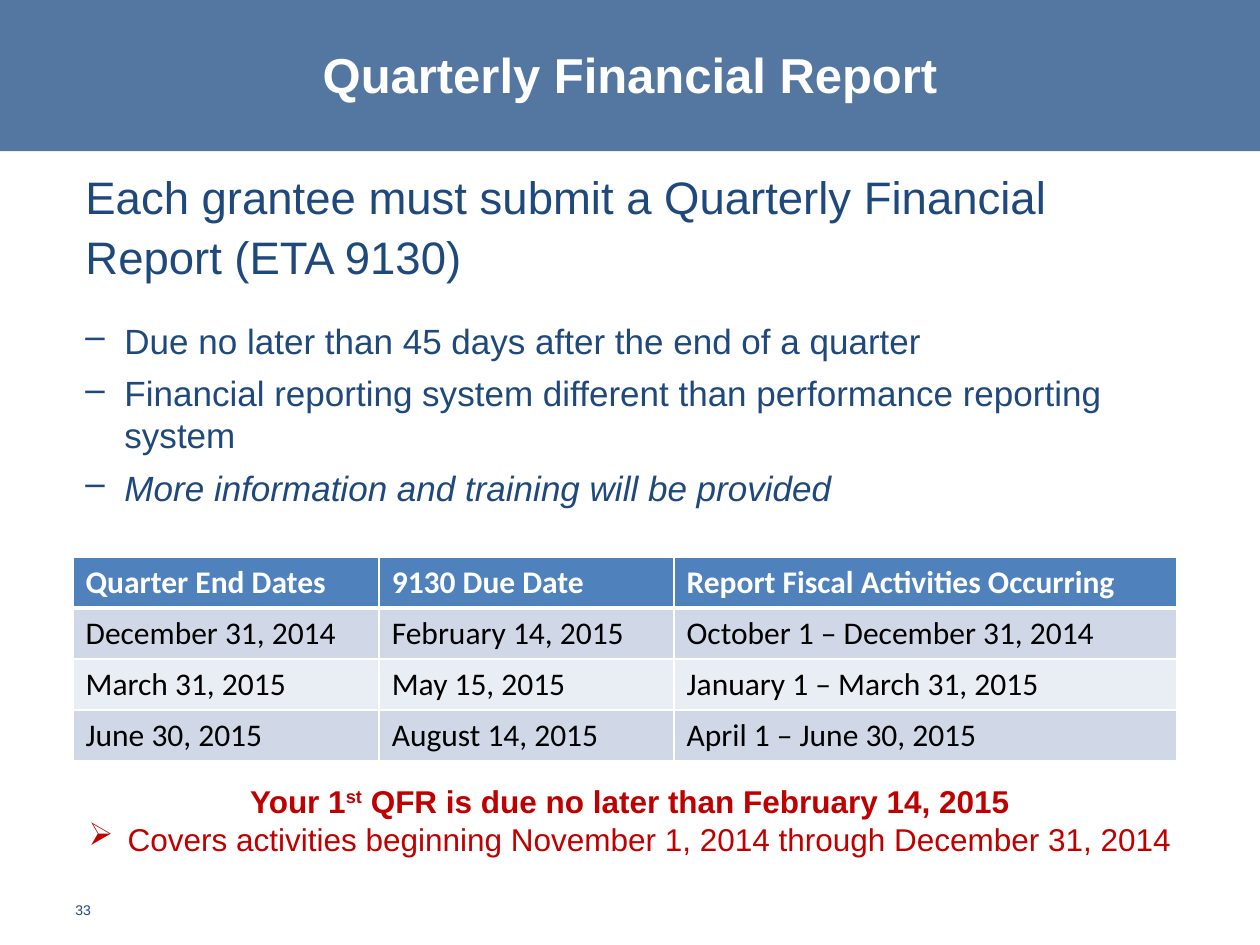
"""Build the Quarterly Financial Report slide with its due-date table."""
from dataclasses import dataclass
from typing import Any

import pptx
import pptx.dml.color
import pptx.enum.shapes
import pptx.enum.text
import pptx.oxml
import pptx.oxml.ns
import pptx.util
from pptx.util import Inches

ALIGN = pptx.enum.text.PP_ALIGN
ANCHOR = pptx.enum.text.MSO_ANCHOR


@dataclass(frozen=True)
class Theme:
    band: str = "376092"
    band_alpha: int = 85
    navy: str = "1F497D"
    red: str = "C00000"
    white: str = "FFFFFF"
    black: str = "000000"
    header: str = "4F81BD"
    stripes: tuple[str, str] = ("D0D8E8", "E9EDF4")
    text_font: str = "Arial"
    table_font: str = "Calibri"
    title_size: int = 28
    lead_size: int = 26
    bullet_size: int = 20
    table_size: int = 18
    number_size: int = 8


@dataclass(frozen=True)
class Bullet:
    text: str
    italic: bool = False
    line_spacing: float = 1.0
    before: int = 0


THEME = Theme()
BULLETS = [
    Bullet("Due no later than 45 days after the end of a quarter", line_spacing=1.1, before=12),
    Bullet("Financial reporting system different than performance reporting system"),
    Bullet("More information and training will be provided", italic=True),
]
COLUMN_WIDTHS = (2.43, 2.34, 3.99)
ROW_HEIGHT = 0.405
DUE_DATES = [
    ("Quarter End Dates", "9130 Due Date", "Report Fiscal Activities Occurring"),
    ("December 31, 2014", "February 14, 2015", "October 1 – December 31, 2014"),
    ("March 31, 2015", "May 15, 2015", "January 1 – March 31, 2015"),
    ("June 30, 2015", "August 14, 2015", "April 1 – June 30, 2015"),
]


def rgb(color: str) -> pptx.dml.color.RGBColor:
    """Turn a hex string into a colour."""
    return pptx.dml.color.RGBColor.from_string(color)


def add_element(parent: Any, tag: str, **attributes: Any) -> Any:
    """Append a DrawingML element with the given attributes."""
    element = pptx.oxml.parse_xml(f"<a:{tag} {pptx.oxml.ns.nsdecls('a')}/>")
    for name, value in attributes.items():
        element.set(name, str(value))
    parent.append(element)
    return element


def add_text(para: Any, text: str, *, size: int, color: str, font: str = THEME.text_font,
             bold: bool = False, italic: bool = False, baseline: int = 0) -> None:
    """Add one formatted span to a paragraph."""
    span = para.add_run()
    span.text = text
    span.font.name = font
    span.font.size = pptx.util.Pt(size)
    span.font.bold = bold
    span.font.italic = italic
    span.font.color.rgb = rgb(color)
    if baseline:
        span.font.fill
        span.font._element.set("baseline", str(baseline * 1000))


def set_bullet(para: Any, mark: str) -> None:
    """Give a paragraph a hanging bullet."""
    properties = para._p.get_or_add_pPr()
    properties.set("marL", str(Inches(0.31)))
    properties.set("indent", str(-Inches(0.31)))
    add_element(properties, "buChar", char=mark)


def add_box(page: Any, left: float, top: float, width: float, height: float,
            anchor: Any = ANCHOR.MIDDLE) -> Any:
    """Add a wrapping text box and return its text frame."""
    box = page.shapes.add_textbox(Inches(left), Inches(top), Inches(width), Inches(height))
    box.text_frame.word_wrap = True
    box.text_frame.vertical_anchor = anchor
    return box.text_frame


def add_heading(page: Any) -> None:
    """Draw the translucent band and place the title over it."""
    title = page.shapes.title
    title.left, title.top, title.width, title.height = (Inches(n) for n in (0, 0, 10, 1.17))
    title.text_frame.vertical_anchor = ANCHOR.MIDDLE
    para = title.text_frame.paragraphs[0]
    para.alignment = ALIGN.CENTER
    add_text(para, "Quarterly Financial Report", size=THEME.title_size, color=THEME.white, bold=True)

    band = page.shapes.add_shape(pptx.enum.shapes.MSO_SHAPE.RECTANGLE,
                                 Inches(-0.01), Inches(0), Inches(10.01), Inches(1.2))
    band.shadow.inherit = False
    band.line.fill.background()
    band.fill.solid()
    band.fill.fore_color.rgb = rgb(THEME.band)
    color = band.element.spPr.find(".//" + pptx.oxml.ns.qn("a:srgbClr"))
    add_element(color, "alpha", val=THEME.band_alpha * 1000)
    title.element.addprevious(band.element)


def add_body(page: Any) -> None:
    """Write the lead sentence and its dashed points."""
    frame = add_box(page, 0.58, 1.25, 8.67, 4.95, ANCHOR.TOP)
    lead = frame.paragraphs[0]
    lead.line_spacing = 1.1
    lead.space_after = pptx.util.Pt(6)
    add_text(lead, "Each grantee must submit a Quarterly Financial Report (ETA 9130)",
             size=THEME.lead_size, color=THEME.navy)
    for bullet in BULLETS:
        para = frame.add_paragraph()
        para.level = 1
        set_bullet(para, "–")
        para.line_spacing = bullet.line_spacing
        para.space_before = pptx.util.Pt(bullet.before)
        para.space_after = pptx.util.Pt(6)
        add_text(para, bullet.text, size=THEME.bullet_size, color=THEME.navy, italic=bullet.italic)


def format_cell(cell: Any, fill: str, bottom_width: int) -> None:
    """Set the fill and white borders of a table cell."""
    properties = cell._tc.get_or_add_tcPr()
    for side, width in (("lnL", 1), ("lnR", 1), ("lnT", 1), ("lnB", bottom_width)):
        line = add_element(properties, side, w=pptx.util.Pt(width))
        add_element(add_element(line, "solidFill"), "srgbClr", val=THEME.white)
    cell.fill.solid()
    cell.fill.fore_color.rgb = rgb(fill)


def add_due_dates(page: Any) -> None:
    """Draw the table of quarters and due dates."""
    table = page.shapes.add_table(
        len(DUE_DATES), len(COLUMN_WIDTHS), Inches(0.58), Inches(4.42),
        Inches(sum(COLUMN_WIDTHS)), Inches(ROW_HEIGHT * len(DUE_DATES))).table
    for column, width in zip(table.columns, COLUMN_WIDTHS):
        column.width = Inches(width)
    for index, texts in enumerate(DUE_DATES):
        is_header = index == 0
        fill = THEME.header if is_header else THEME.stripes[(index - 1) % 2]
        for cell, text in zip(table.rows[index].cells, texts):
            format_cell(cell, fill, 3 if is_header else 1)
            add_text(cell.text_frame.paragraphs[0], text, size=THEME.table_size,
                     font=THEME.table_font, bold=is_header,
                     color=THEME.white if is_header else THEME.black)


def add_reminder(page: Any) -> None:
    """Write the red reminder below the table."""
    frame = add_box(page, 0.5, 5.92, 9, 1.17)
    style = {"size": THEME.table_size, "color": THEME.red}
    first = frame.paragraphs[0]
    first.alignment = ALIGN.CENTER
    add_text(first, "Your 1", bold=True, **style)
    add_text(first, "st", bold=True, baseline=30, **style)
    add_text(first, " QFR is due no later than February 14, 2015", bold=True, **style)
    second = frame.add_paragraph()
    set_bullet(second, "➢")
    second.alignment = ALIGN.CENTER
    add_text(second, "Covers activities beginning November 1, 2014 through December 31, 2014", **style)


def main() -> None:
    """Build and save the deck."""
    deck = pptx.Presentation()
    deck.slide_width, deck.slide_height = Inches(10), Inches(7.5)
    page = deck.slides.add_slide(deck.slide_layouts[5])
    add_heading(page)
    number = add_box(page, 0.5, 7.02, 2.33, 0.4)
    add_text(number.paragraphs[0], "33", size=THEME.number_size, color=THEME.navy)
    add_body(page)
    add_due_dates(page)
    add_reminder(page)
    deck.save("out.pptx")


if __name__ == "__main__":
    main()
